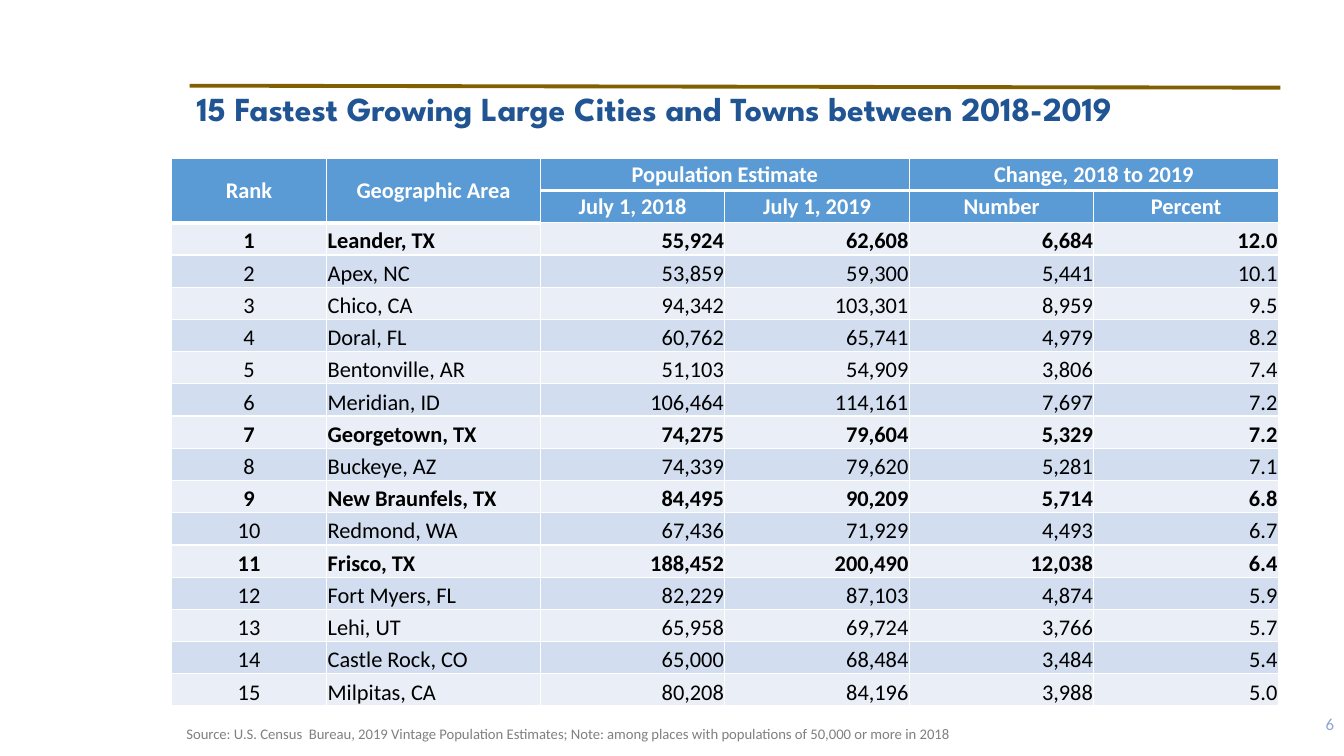
from lxml.etree import SubElement
from pptx import Presentation
from pptx.dml.color import RGBColor
from pptx.enum.shapes import MSO_CONNECTOR
from pptx.enum.text import MSO_ANCHOR as Anchor, PP_ALIGN as Align
from pptx.oxml.ns import qn
from pptx.util import Inches, Pt

COLORS = {
    "rule": "806000", "title": "205493", "header": "5B9BD5",
    "light band": "EAEFF7", "dark band": "D2DEEF", "white": "FFFFFF",
    "black": "000000", "source": "808080", "page number": "8FA5D1",
}
HEADERS = [
    ["Rank", "Geographic Area", "Population Estimate", "", "Change, 2018 to 2019", ""],
    ["", "", "July 1, 2018", "July 1, 2019", "Number", "Percent"],
]
CITIES = [
    ["Leander, TX", "55,924", "62,608", "6,684", "12.0"],
    ["Apex, NC", "53,859", "59,300", "5,441", "10.1"],
    ["Chico, CA", "94,342", "103,301", "8,959", "9.5"],
    ["Doral, FL", "60,762", "65,741", "4,979", "8.2"],
    ["Bentonville, AR", "51,103", "54,909", "3,806", "7.4"],
    ["Meridian, ID", "106,464", "114,161", "7,697", "7.2"],
    ["Georgetown, TX", "74,275", "79,604", "5,329", "7.2"],
    ["Buckeye, AZ", "74,339", "79,620", "5,281", "7.1"],
    ["New Braunfels, TX", "84,495", "90,209", "5,714", "6.8"],
    ["Redmond, WA", "67,436", "71,929", "4,493", "6.7"],
    ["Frisco, TX", "188,452", "200,490", "12,038", "6.4"],
    ["Fort Myers, FL", "82,229", "87,103", "4,874", "5.9"],
    ["Lehi, UT", "65,958", "69,724", "3,766", "5.7"],
    ["Castle Rock, CO", "65,000", "68,484", "3,484", "5.4"],
    ["Milpitas, CA", "80,208", "84,196", "3,988", "5.0"],
]
COLUMN_WIDTHS = [1.54, 2.12] + [1.83] * 4
COLUMN_ALIGNS = [Align.CENTER, Align.LEFT] + [Align.RIGHT] * 4


def write(frame, text, size, color, font="Calibri", bold=False, align=Align.LEFT):
    """Fill a text frame with one formatted paragraph and return the paragraph."""
    frame.text = text
    para = frame.paragraphs[0]
    para.alignment = align
    for span in para.runs:
        span.font.size = Pt(size)
        span.font.name = font
        span.font.bold = bold
        span.font.color.rgb = RGBColor.from_string(COLORS[color])
    return para


def add_borders(cell, widths):
    """Draw white borders; widths maps L, R, T and B to points."""
    properties = cell._tc.get_or_add_tcPr()
    for side, width in widths.items():
        line = SubElement(properties, qn(f"a:ln{side}"), w=str(Pt(width)))
        fill = SubElement(line, qn("a:solidFill"))
        SubElement(fill, qn("a:srgbClr"), val=COLORS["white"])


deck = Presentation()
deck.slide_width, deck.slide_height = Inches(13.33), Inches(7.5)
page = deck.slides.add_slide(deck.slide_layouts[5])

# Title and the rule above it
title = page.shapes.title
title.left, title.top = Inches(1.85), Inches(0.87)
title.width, title.height = Inches(10.82), Inches(0.6)
title.text_frame.word_wrap = True
title.text_frame.vertical_anchor = Anchor.TOP
para = write(title.text_frame, "15 Fastest Growing Large Cities and Towns between 2018-2019",
             24, "title", font="League Spartan", bold=True)
para.line_spacing = 0.9

rule = page.shapes.add_connector(MSO_CONNECTOR.STRAIGHT, Inches(1.88), Inches(0.85),
                                 Inches(12.7), Inches(0.87))
rule.line.color.rgb = RGBColor.from_string(COLORS["rule"])
rule.line.width = Pt(2.75)
SubElement(rule._element.spPr, qn("a:effectLst"))

# City table; Texas cities stand out in bold
rows = HEADERS + [[str(rank)] + city for rank, city in enumerate(CITIES, 1)]
table = page.shapes.add_table(len(rows), len(COLUMN_WIDTHS), Inches(1.7), Inches(1.57),
                              Inches(sum(COLUMN_WIDTHS)), Inches(0.32 * len(rows))).table
for column, width in zip(table.columns, COLUMN_WIDTHS):
    column.width = Inches(width)

for r, values in enumerate(rows):
    table.rows[r].height = Inches(0.32)
    is_header = r < len(HEADERS)
    band = "header" if is_header else ("light band", "dark band")[r % 2]
    for c, value in enumerate(values):
        cell = table.cell(r, c)
        cell.margin_left = cell.margin_right = cell.margin_top = Inches(0.01)
        cell.margin_bottom = 0
        cell.vertical_anchor = Anchor.MIDDLE if is_header else Anchor.BOTTOM
        add_borders(cell, {"L": 1, "R": 1, "T": 3 if r == 1 else 1, "B": 3 if r == 0 else 1})
        cell.fill.solid()
        cell.fill.fore_color.rgb = RGBColor.from_string(COLORS[band])
        write(cell.text_frame, value, 16, "white" if is_header else "black",
              bold=is_header or values[1].endswith("TX"),
              align=Align.CENTER if is_header else COLUMN_ALIGNS[c])

for c in (0, 1):
    table.cell(0, c).merge(table.cell(1, c))
for c in (2, 4):
    table.cell(0, c).merge(table.cell(0, c + 1))

# Footer
number = page.shapes.add_textbox(Inches(12.14), Inches(7.01), Inches(1.19), Inches(0.34))
number.text_frame.word_wrap = True
number.text_frame.vertical_anchor = Anchor.MIDDLE
write(number.text_frame, "6", 12, "page number", align=Align.RIGHT)

source = page.shapes.add_textbox(Inches(1.75), Inches(7.13), Inches(9.41), Inches(0.29))
source.text_frame.word_wrap = True
para = write(source.text_frame,
             "Source: U.S. Census  Bureau, 2019 Vintage Population Estimates; "
             "Note: among places with populations of 50,000 or more in 2018",
             10.5, "source")
para.line_spacing = 1.07

deck.save("out.pptx")
